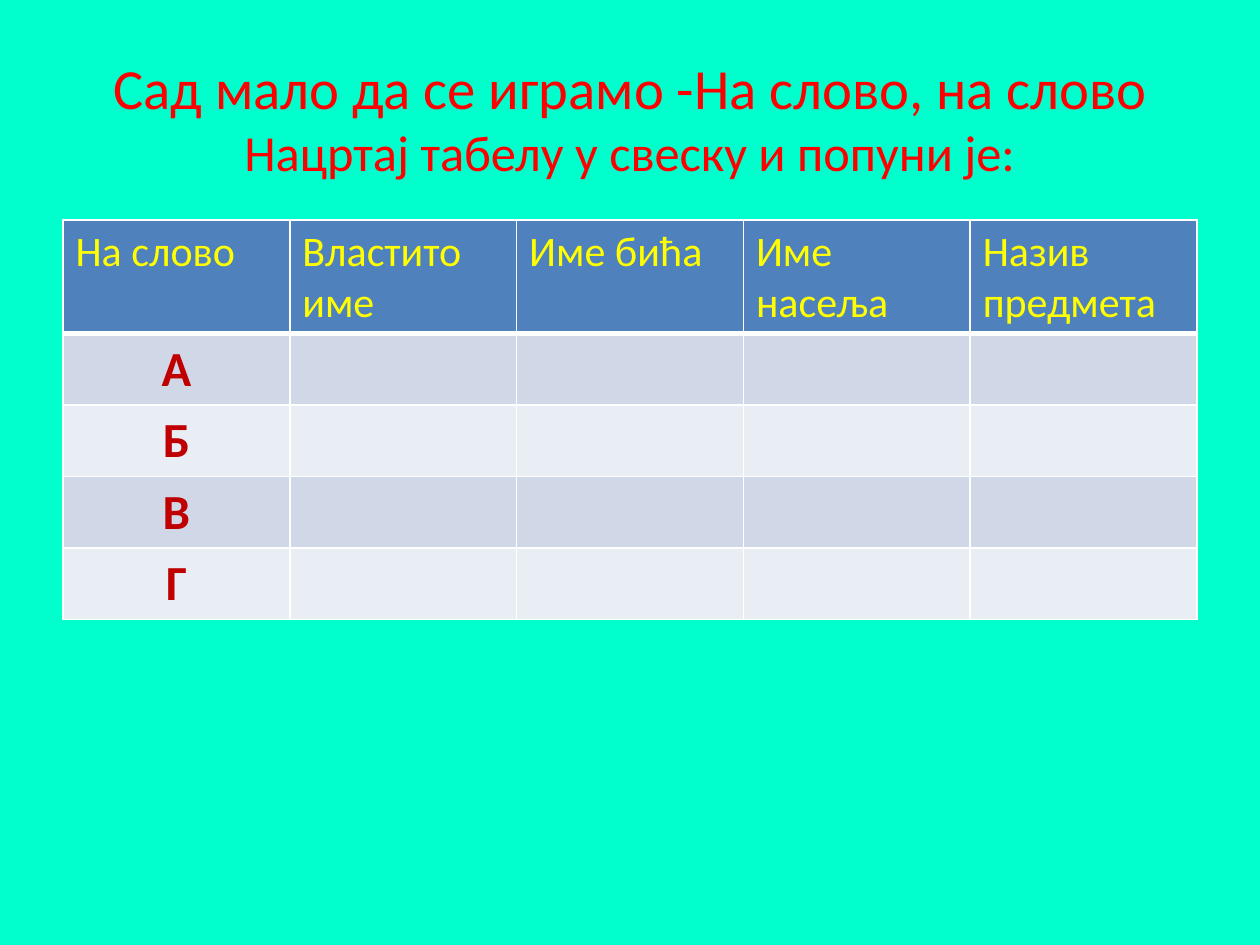
from lxml import etree
from pptx import Presentation
from pptx.dml.color import RGBColor
from pptx.enum.text import MSO_ANCHOR, PP_ALIGN
from pptx.oxml.ns import qn
from pptx.util import Pt

MIDDLE = MSO_ANCHOR.MIDDLE
LEFT, CENTER = PP_ALIGN.LEFT, PP_ALIGN.CENTER
PX = 914400 / 126

TITLE = [("Сад мало да се играмо -На слово, на слово", 32.4),
         ("Нацртај табелу у свеску и попуни је:", 28.8)]
HEADS = ["На слово", "Властито име", "Име бића", "Име насеља", "Назив предмета"]
LETTERS = "АБВГ"

HEAD = {"size": Pt(24), "bold": False, "color": "FFFF00"}
LETTER = {"size": Pt(28), "bold": True, "color": "C00000"}
BANDS = ["D0D8E8", "E9EDF4"]


def px(n):
    return round(n * PX)


def rgb(code):
    return RGBColor.from_string(code)


def write(para, text, style):
    run = para.add_run()
    run.text = text
    run.font.name = "Calibri"
    for key, value in style.items():
        if key == "color":
            run.font.color.rgb = rgb(value)
        else:
            setattr(run.font, key, value)


def edge(cell, widths):
    """Draw white cell borders, given a width in points for each side."""
    props = cell._tc.get_or_add_tcPr()
    for spot, (side, width) in enumerate(widths.items()):
        line = etree.Element(qn(f"a:ln{side}"), w=str(Pt(width)))
        fill = etree.SubElement(line, qn("a:solidFill"))
        etree.SubElement(fill, qn("a:srgbClr"), val="FFFFFF")
        props.insert(spot, line)


def add_title(slide, x, y, w, h):
    frame = slide.shapes.add_textbox(px(x), px(y), px(w), px(h)).text_frame
    frame.word_wrap = True
    frame.vertical_anchor = MIDDLE
    para = frame.paragraphs[0]
    para.alignment = CENTER
    for row, (text, size) in enumerate(TITLE):
        if row:
            para.add_line_break()
        write(para, text, {"size": Pt(size), "color": "FF0000"})


def add_grid(slide, x, y, w, h):
    rows, cols = len(LETTERS) + 1, len(HEADS)
    table = slide.shapes.add_table(rows, cols, px(x), px(y), px(w), px(h)).table
    for col in table.columns:
        col.width = px(w / cols)
    for r, row in enumerate(table.rows):
        row.height = px(63 if r else 101)
        texts = [LETTERS[r - 1]] if r else HEADS
        style, align = (LETTER, CENTER) if r else (HEAD, LEFT)
        for c, cell in enumerate(row.cells):
            cell.fill.solid()
            cell.fill.fore_color.rgb = rgb(BANDS[(r - 1) % 2] if r else "4F81BD")
            edge(cell, {"L": 1, "R": 1, "T": 3 if r == 1 else 1, "B": 1 if r else 3})
            if c < len(texts):
                para = cell.text_frame.paragraphs[0]
                para.alignment = align
                write(para, texts[c], style)


def main():
    deck = Presentation()
    deck.slide_width, deck.slide_height = px(1260), px(945)
    slide = deck.slides.add_slide(deck.slide_layouts[6])
    back = slide.background.fill
    back.solid()
    back.fore_color.rgb = rgb("00FFCC")
    add_title(slide, 63, 38, 1134, 158)
    add_grid(slide, 63, 220, 1134, 399)
    deck.save("out.pptx")


if __name__ == "__main__":
    main()
